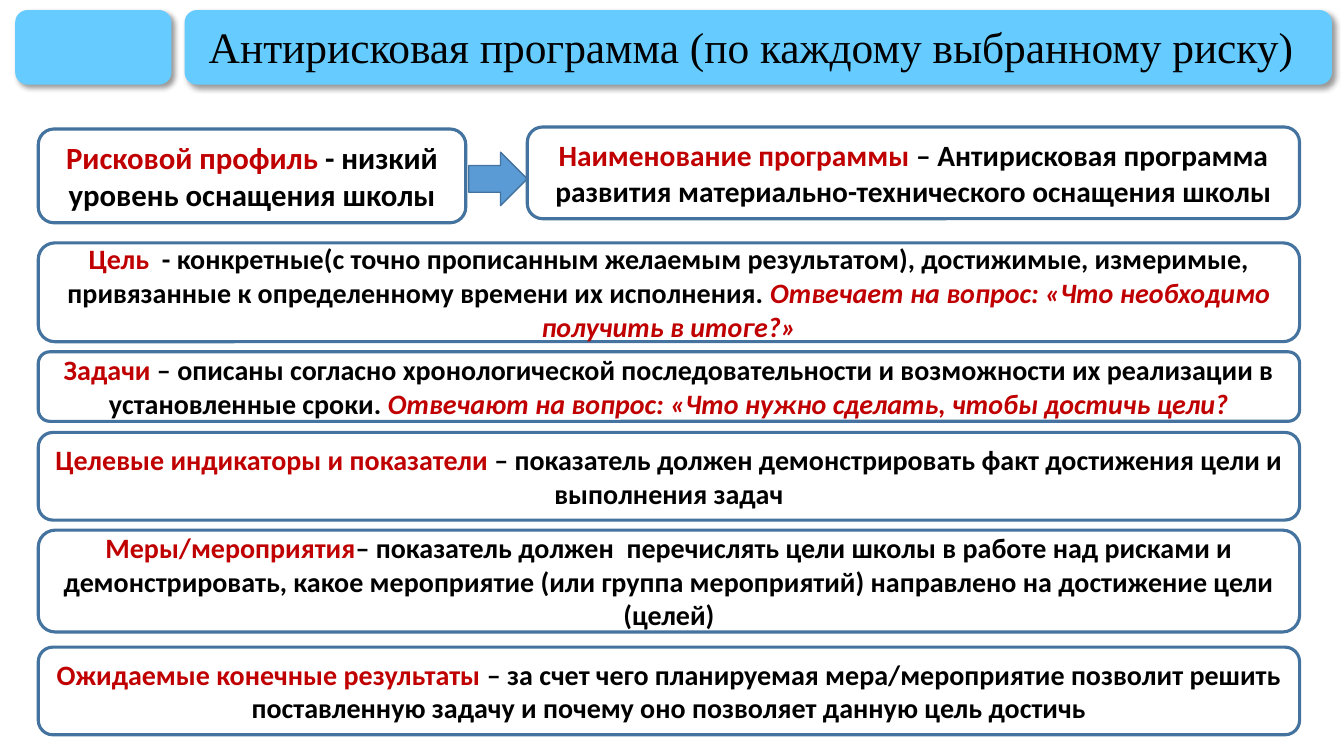
"""Build the slide that outlines an anti-risk programme for a school."""
from dataclasses import dataclass

from lxml import etree
from pptx import Presentation
from pptx.dml.color import RGBColor
from pptx.enum.shapes import MSO_SHAPE
from pptx.enum.text import MSO_ANCHOR, MSO_AUTO_SIZE, PP_ALIGN
from pptx.oxml.ns import qn
from pptx.shapes.autoshape import Shape
from pptx.slide import Slide
from pptx.text.text import Font
from pptx.util import Inches, Pt

ROUNDED = MSO_SHAPE.ROUNDED_RECTANGLE
ARROW = MSO_SHAPE.RIGHT_ARROW
MIDDLE = MSO_ANCHOR.MIDDLE
NO_AUTOFIT = MSO_AUTO_SIZE.NONE
LEFT, CENTER = PP_ALIGN.LEFT, PP_ALIGN.CENTER

SLIDE_WIDTH = Inches(13.33)
SLIDE_HEIGHT = Inches(7.5)
TITLE_ONLY = 5


@dataclass(frozen=True)
class Theme:
    """Colours, fonts and point sizes of the slide."""

    header: str = "66CCFF"
    paper: str = "FFFFFF"
    border: str = "43739E"
    arrow: str = "5B9BD5"
    ink: str = "000000"
    accent: str = "C00000"
    title_font: str = "Times New Roman"
    body_font: str = "Calibri"
    title_size: float = 31
    profile_size: float = 22
    name_size: float = 21
    body_size: float = 20
    border_width: float = 2.25
    arrow_border_width: float = 1


@dataclass(frozen=True)
class Area:
    """A rectangle in percent of the slide's width and height."""

    left: float
    top: float
    width: float
    height: float

    def lengths(self) -> tuple[int, int, int, int]:
        """Return left, top, width and height in slide units."""
        return (
            round(SLIDE_WIDTH * self.left / 100),
            round(SLIDE_HEIGHT * self.top / 100),
            round(SLIDE_WIDTH * self.width / 100),
            round(SLIDE_HEIGHT * self.height / 100),
        )


@dataclass(frozen=True)
class Card:
    """A framed statement: a coloured term, its text and a closing question."""

    area: Area
    term: str
    text: str
    question: str = ""
    size: float = 20


THEME = Theme()
TITLE = "Антирисковая программа (по каждому выбранному риску)"
TITLE_AREA = Area(14.78, 2.13, 83.27, 8.8)
HEADER_AREAS = (Area(13.73, 1.33, 85.37, 9.87), Area(1.13, 1.33, 11.63, 9.87))
ARROW_AREA = Area(34.88, 20.13, 4.35, 7.07)


def full_row(top: float, height: float) -> Area:
    """Return an area that spans the content width."""
    return Area(2.85, top, 93.85, height)


CARDS = (
    Card(Area(2.85, 17.07, 31.81, 12.4), "Рисковой профиль",
         " - низкий уровень оснащения школы", size=THEME.profile_size),
    Card(Area(39.23, 16.8, 57.46, 12.13), "Наименование программы ",
         "– Антирисковая программа развития материально-технического "
         "оснащения школы", size=THEME.name_size),
    Card(full_row(32.13, 13.07), "Цель ",
         " - конкретные(с точно прописанным желаемым результатом), достижимые, "
         "измеримые, привязанные к определенному времени их исполнения. ",
         "Отвечает на вопрос: «Что необходимо получить в итоге?»",
         THEME.body_size),
    Card(full_row(46.53, 9.2), "Задачи ",
         "– описаны согласно хронологической последовательности и возможности "
         "их реализации в установленные сроки. ",
         "Отвечают на вопрос: «Что нужно сделать, чтобы достичь цели?",
         THEME.body_size),
    Card(full_row(57.2, 11.6), "Целевые индикаторы и показатели ",
         "– показатель должен демонстрировать факт достижения цели и "
         "выполнения задач", size=THEME.body_size),
    Card(full_row(70.13, 13.47), "Меры/мероприятия",
         "– показатель должен  перечислять цели школы в работе над рисками и "
         "демонстрировать, какое мероприятие (или группа мероприятий) "
         "направлено на достижение цели (целей)", size=THEME.body_size),
    Card(full_row(85.6, 11.6), "Ожидаемые конечные результаты ",
         "– за счет чего планируемая мера/мероприятие позволит решить "
         "поставленную задачу и почему оно позволяет данную цель достичь",
         size=THEME.body_size),
)


def style_font(font: Font, name: str, size: float, color: str) -> None:
    """Set the typeface, size and colour of a font."""
    font.name = name
    font.size = Pt(size)
    font.color.rgb = RGBColor.from_string(color)


def add_block(page: Slide, kind: MSO_SHAPE, area: Area, fill: str,
              border_width: float = 0) -> Shape:
    """Add a filled shape, framed when a border width is given."""
    shape = page.shapes.add_shape(kind, *area.lengths())
    shape.shadow.inherit = False
    shape.fill.solid()
    shape.fill.fore_color.rgb = RGBColor.from_string(fill)
    if border_width:
        shape.line.color.rgb = RGBColor.from_string(THEME.border)
        shape.line.width = Pt(border_width)
    else:
        shape.line.fill.background()
    return shape


def add_header_bar(page: Slide, area: Area) -> None:
    """Add a header bar with a soft shadow to its lower right."""
    bar = add_block(page, ROUNDED, area, THEME.header)
    effects = bar.element.spPr.find(qn("a:effectLst"))
    shadow = etree.SubElement(
        effects, qn("a:outerShdw"), blurRad=str(Pt(4)), dist=str(Pt(3)),
        dir=str(45 * 60000), algn="tl", rotWithShape="0")
    color = etree.SubElement(shadow, qn("a:srgbClr"), val=THEME.ink)
    etree.SubElement(color, qn("a:alpha"), val="40000")


def place_title(page: Slide) -> None:
    """Move the title over the header bar and format it."""
    title = page.shapes.title
    title.left, title.top, title.width, title.height = TITLE_AREA.lengths()
    title.element.getparent().append(title.element)
    frame = title.text_frame
    frame.text = TITLE
    frame.auto_size = NO_AUTOFIT
    frame.vertical_anchor = MIDDLE
    para = frame.paragraphs[0]
    para.alignment = LEFT
    para.line_spacing = 0.9
    style_font(para.runs[0].font, THEME.title_font, THEME.title_size, THEME.ink)


def add_card(page: Slide, card: Card) -> None:
    """Add a framed card with its centred statement."""
    box = add_block(page, ROUNDED, card.area, THEME.paper, THEME.border_width)
    frame = box.text_frame
    frame.word_wrap = True
    frame.vertical_anchor = MIDDLE
    para = frame.paragraphs[0]
    para.alignment = CENTER
    parts = ((card.term, THEME.accent, False), (card.text, THEME.ink, False),
             (card.question, THEME.accent, True))
    for text, color, italic in parts:
        if text:
            span = para.add_run()
            span.text = text
            style_font(span.font, THEME.body_font, card.size, color)
            span.font.bold = True
            span.font.italic = italic


def main() -> None:
    """Build the deck and save it."""
    deck = Presentation()
    deck.slide_width, deck.slide_height = SLIDE_WIDTH, SLIDE_HEIGHT
    page = deck.slides.add_slide(deck.slide_layouts[TITLE_ONLY])
    for area in HEADER_AREAS:
        add_header_bar(page, area)
    place_title(page)
    add_block(page, ARROW, ARROW_AREA, THEME.arrow, THEME.arrow_border_width)
    for card in CARDS:
        add_card(page, card)
    deck.save("out.pptx")


if __name__ == "__main__":
    main()
